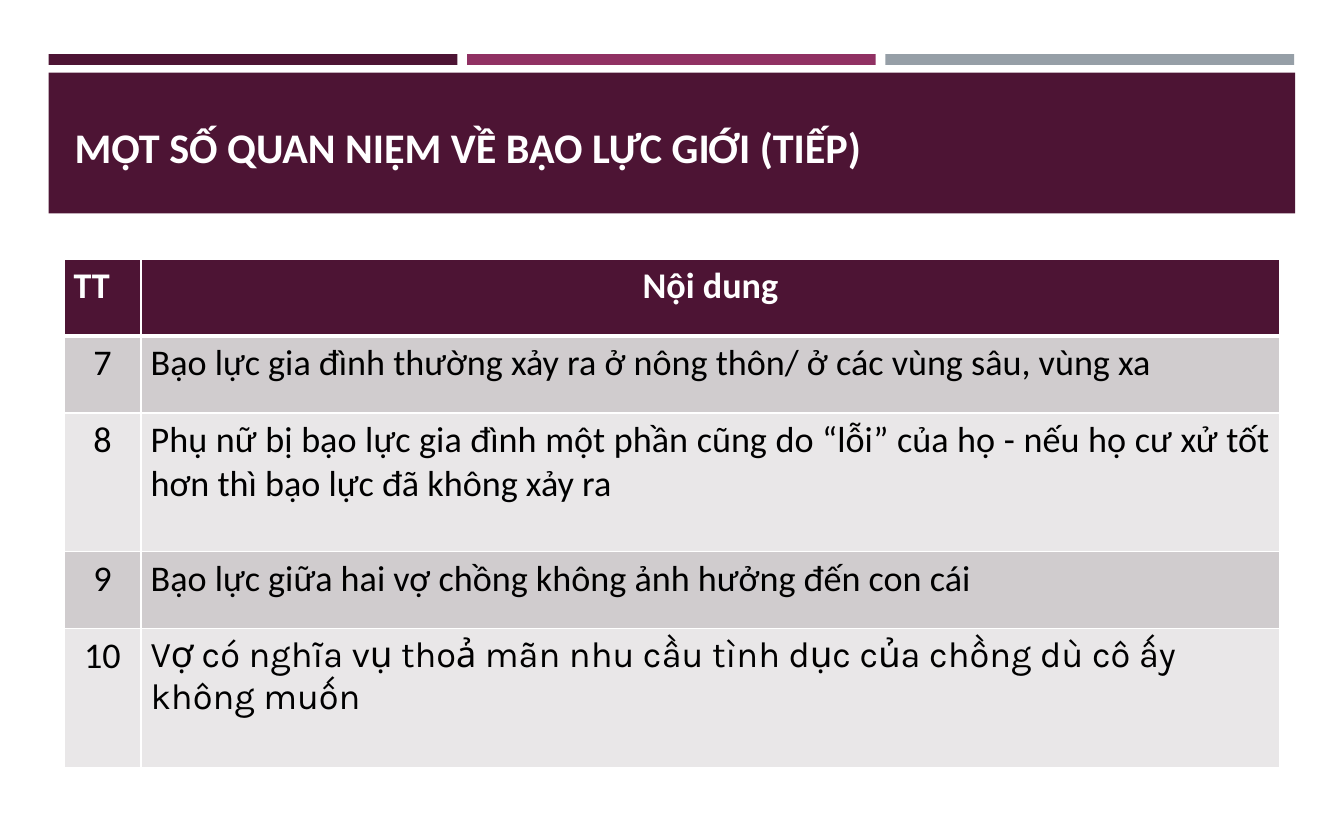
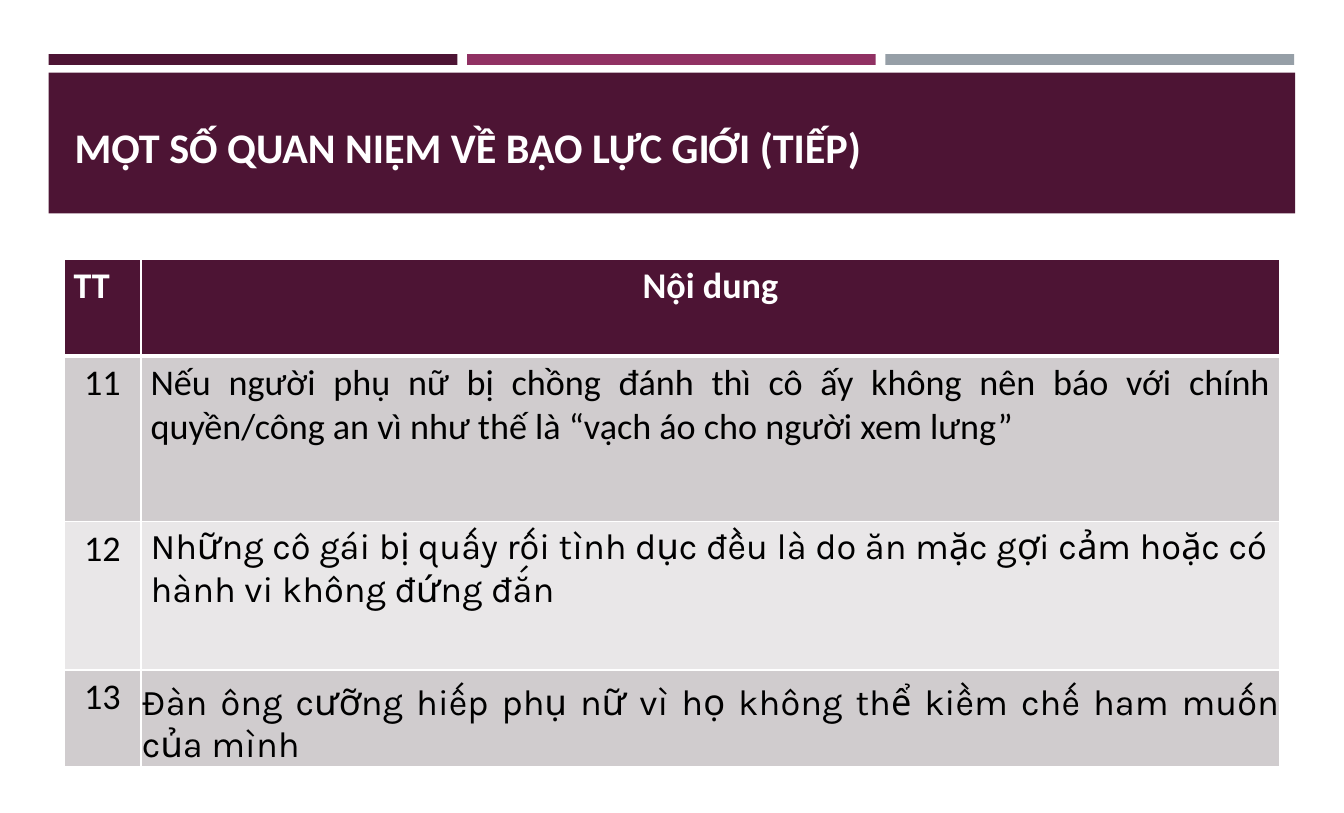
from dataclasses import dataclass

from lxml.etree import SubElement
from pptx import Presentation
from pptx.dml.color import RGBColor
from pptx.enum.shapes import MSO_SHAPE
from pptx.enum.text import MSO_ANCHOR, PP_ALIGN
from pptx.oxml.ns import qn
from pptx.util import Emu, Pt

EMU_PER_PX = 9144  # 100 px to the inch
PLUM, MAGENTA, GREY = "4D1434", "903163", "969FA7"
WHITE, BLACK = "FFFFFF", "000000"
BODY_FILLS = ("D0CCCE", "E9E7E8")
TITLE = "MỘT SỐ QUAN NIỆM VỀ BẠO LỰC GIỚI (TIẾP)"
TITLE_FONT = {"name": "Calibri", "size": Pt(28), "bold": True}
HEADER_FONT = {"name": "Calibri", "size": Pt(24), "bold": True}
BODY_FONT = HEADER_FONT | {"bold": False}
MARGINS = ("margin_left", "margin_top", "margin_right", "margin_bottom")
LEFT, CENTER, JUSTIFY = PP_ALIGN.LEFT, PP_ALIGN.CENTER, PP_ALIGN.JUSTIFY


@dataclass(frozen=True)
class Statement:
    text: str
    height: int
    align: PP_ALIGN = LEFT
    font: str = "Calibri"
    anchor: MSO_ANCHOR = MSO_ANCHOR.TOP
    insets: tuple[int, ...] = (9, 5, 9, 5)


@dataclass(frozen=True)
class Page:
    first_number: int
    header_height: int
    statements: tuple[Statement, ...]


PAGES = (
    Page(7, 71, (
        Statement("Bạo lực gia đình thường xảy ra ở nông thôn/ ở các vùng sâu, vùng xa", 71),
        Statement("Phụ nữ bị bạo lực gia đình một phần cũng do “lỗi” của họ - nếu họ "
                  "cư xử tốt hơn thì bạo lực đã không xảy ra", 128, JUSTIFY),
        Statement("Bạo lực giữa hai vợ chồng không ảnh hưởng đến con cái", 71),
        Statement("Vợ có nghĩa vụ thoả mãn nhu cầu tình dục của chồng dù cô ấy "
                  "không muốn", 128, font="Karla"),
    )),
    Page(11, 89, (
        Statement("Nếu người phụ nữ bị chồng đánh thì cô ấy không nên báo với chính "
                  "quyền/công an vì như thế là “vạch áo cho người xem lưng”", 153, JUSTIFY),
        Statement("Những cô gái bị quấy rối tình dục đều là do ăn mặc gợi cảm hoặc có "
                  "hành vi không đứng đắn", 137, font="Karla"),
        Statement("Đàn ông cưỡng hiếp phụ nữ vì họ không thể kiềm chế ham muốn "
                  "của mình", 89, JUSTIFY, "Karla", MSO_ANCHOR.BOTTOM, (1, 0, 1, 0)),
    )),
)


def px(length: int) -> Emu:
    return Emu(length * EMU_PER_PX)


def rgb(color: str) -> RGBColor:
    return RGBColor.from_string(color)


def set_values(target, values: dict) -> None:
    for name, value in values.items():
        setattr(target, name, value)


def write(para, text: str, font: dict, color: str, align: PP_ALIGN = LEFT) -> None:
    para.alignment = align
    span = para.add_run()
    span.text = text
    set_values(span.font, font)
    span.font.color.rgb = rgb(color)


def add_band(slide, left: int, top: int, width: int, height: int, color: str) -> None:
    band = slide.shapes.add_shape(MSO_SHAPE.RECTANGLE, *map(px, (left, top, width, height)))
    band.shadow.inherit = False
    band.fill.solid()
    band.fill.fore_color.rgb = rgb(color)
    band.line.fill.background()


def add_frame(slide) -> None:
    """Draw the three strips, the title band and the title."""
    for index, color in enumerate((PLUM, MAGENTA, GREY)):
        add_band(slide, 45 + index * 386, 50, 377, 10, color)
    add_band(slide, 45, 67, 1150, 130, PLUM)
    box = slide.shapes.add_textbox(*map(px, (59, 77, 1122, 87))).text_frame
    set_values(box, {"word_wrap": True, "vertical_anchor": MSO_ANCHOR.BOTTOM})
    write(box.paragraphs[0], TITLE, TITLE_FONT, WHITE)


def style_cell(cell, fill: str, insets: tuple[int, ...], top: int, bottom: int) -> None:
    """Set the fill, insets and white borders; top and bottom are points."""
    set_values(cell, dict(zip(MARGINS, map(px, insets))))
    properties = cell._tc.get_or_add_tcPr()
    for side, points in {"L": 1, "R": 1, "T": top, "B": bottom}.items():
        border = SubElement(properties, qn(f"a:ln{side}"), w=str(Pt(points)))
        SubElement(SubElement(border, qn("a:solidFill")), qn("a:srgbClr"), val=WHITE)
    cell.fill.solid()
    cell.fill.fore_color.rgb = rgb(fill)


def add_statements(slide, page: Page) -> None:
    heights = [page.header_height, *(item.height for item in page.statements)]
    table = slide.shapes.add_table(
        len(heights), 2, *map(px, (59, 239, 1122, sum(heights)))).table
    for column, width in zip(table.columns, (71, 1051)):
        column.width = px(width)
    for row, height in zip(table.rows, heights):
        row.height = px(height)

    for column, (text, align) in enumerate((("TT", LEFT), ("Nội dung", CENTER))):
        cell = table.cell(0, column)
        style_cell(cell, PLUM, Statement.insets, 1, 3)
        write(cell.text_frame.paragraphs[0], text, HEADER_FONT, WHITE, align)

    for index, item in enumerate(page.statements):
        number = Statement(str(page.first_number + index), item.height, CENTER)
        for column, content in enumerate((number, item)):
            cell = table.cell(index + 1, column)
            style_cell(cell, BODY_FILLS[index % 2], content.insets, 1 if index else 3, 1)
            cell.vertical_anchor = content.anchor
            write(cell.text_frame.paragraphs[0], content.text,
                  BODY_FONT | {"name": content.font}, BLACK, content.align)


def main() -> None:
    deck = Presentation()
    set_values(deck, {"slide_width": px(1240), "slide_height": px(750)})
    for page in PAGES:
        slide = deck.slides.add_slide(deck.slide_layouts[6])
        add_frame(slide)
        add_statements(slide, page)
    deck.save("out.pptx")


if __name__ == "__main__":
    main()
